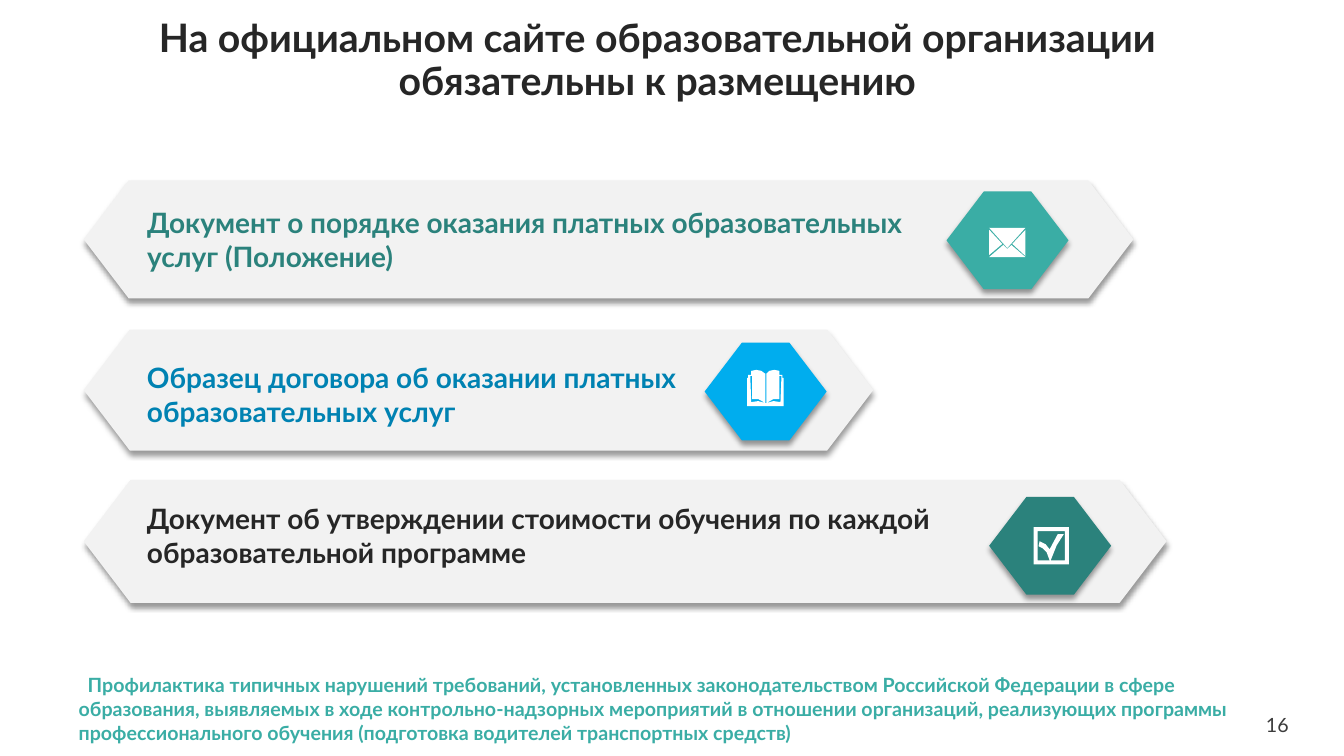
"""Build the slide on documents that must be posted on the school website."""
from lxml import etree
from pptx import Presentation
from pptx.dml.color import RGBColor
from pptx.enum.shapes import MSO_SHAPE
from pptx.enum.text import MSO_ANCHOR, PP_ALIGN
from pptx.oxml.ns import qn
from pptx.util import Inches, Pt

HEXAGON = MSO_SHAPE.HEXAGON
TOP, MIDDLE = MSO_ANCHOR.TOP, MSO_ANCHOR.MIDDLE
LEFT, CENTER, RIGHT = PP_ALIGN.LEFT, PP_ALIGN.CENTER, PP_ALIGN.RIGHT
COLORS = {
    "banner": "F2F2F2", "white": "FFFFFF", "black": "000000",
    "teal": "3AADA5", "dark_teal": "2B827C", "blue": "00ADEE",
    "dark_blue": "0082B2", "ink": "262626", "gray": "3C3C3C",
}

prs = Presentation()
prs.slide_width, prs.slide_height = Inches(13.33), Inches(7.5)
slide = prs.slides.add_slide(prs.slide_layouts[6])
COLUMN, ROW = prs.slide_width / 100, prs.slide_height / 100
GLYPH_UNIT = Inches(0.01)
ICON_WIDTH, ICON_HEIGHT = 9.08, 12.93
BANNER_LEFT, CAPTION_LEFT, CAPTION_HEIGHT = 6.23, 10.2, 10.27


def add_text(words, left, top, width, height, size, color, bold=True,
             align=LEFT, anchor=TOP, inset=None):
    box = slide.shapes.add_textbox(int(left * COLUMN), int(top * ROW),
                                   int(width * COLUMN), int(height * ROW))
    frame = box.text_frame
    frame.word_wrap = True
    frame.vertical_anchor = anchor
    if inset is not None:
        frame.margin_left = frame.margin_right = inset
        frame.margin_top = frame.margin_bottom = inset
    paragraph = frame.paragraphs[0]
    paragraph.text = words
    paragraph.alignment = align
    font = paragraph.font
    font.name, font.size, font.bold = "Lato", Pt(size), bold
    font.color.rgb = RGBColor.from_string(COLORS[color])
    return frame


def add_hexagon(left, top, width, height, color):
    hexagon = slide.shapes.add_shape(HEXAGON, int(left * COLUMN), int(top * ROW),
                                     int(width * COLUMN), int(height * ROW))
    hexagon.adjustments[0] = 0.381
    hexagon.fill.solid()
    hexagon.fill.fore_color.rgb = RGBColor.from_string(COLORS[color])
    hexagon.line.fill.background()
    hexagon.shadow.inherit = False
    effects = hexagon.element.spPr.find(qn("a:effectLst"))
    shadow = etree.SubElement(effects, qn("a:outerShdw"), blurRad=str(Pt(4)),
                              dist=str(Pt(3)), dir="5400000", rotWithShape="0")
    tint = etree.SubElement(shadow, qn("a:srgbClr"), val=COLORS["black"])
    etree.SubElement(tint, qn("a:alpha"), val="40000")


page_right = [(19, 33), (26, 31), (33, 32), (34, 6), (32, 6), (32, 29), (26, 29)]
book = [
    [(18, 4), (14, 1), (9, 0), (4, 1), (4, 5), (1, 5), (1, 8), (0, 8), (0, 36),
     (36, 36), (36, 8), (35, 8), (35, 5), (32, 5), (32, 1), (27, 0), (22, 1), (19, 4)],
    [(18, 4), (18, 33), (19, 33), (19, 4)],
    page_right,
    [(37 - x, y) for x, y in page_right],
]
envelope = [
    [(22, 17), (36, 29), (0, 29), (14, 17), (18, 21)],
    [(36, 2), (36, 28), (23, 16)],
    [(0, 2), (13, 16), (0, 27)],
    [(0, 0), (36, 0), (18, 20)],
]
checkbox = [
    [(0, 0), (35, 0), (35, 37), (0, 37)],
    [(4, 4), (4, 33), (16, 33), (13, 25), (9, 21), (5, 19), (6, 14), (12, 17),
     (16, 22), (24, 7), (30, 7), (23, 18), (17, 33), (31, 33), (31, 4)],
]

documents = [
    ("Документ о порядке оказания платных образовательных услуг (Положение)",
     "dark_teal", "teal", (23.87, 78.1, 15.6), (70.43, 25.33), (26.53, 57.85),
     envelope, (73.6, 30.13)),
    ("Образец договора об оказании платных образовательных услуг",
     "dark_blue", "blue", (43.6, 58.75, 16), (52.43, 45.33), (47.07, 42.6),
     book, (55.6, 48.93)),
    ("Документ об утверждении стоимости обучения по каждой образовательной программе",
     "ink", "dark_teal", (63.47, 80.57, 16.27), (73.6, 65.73), (65.73, 62.4),
     checkbox, (76.9, 69.73)),
]

add_text("16", 94, 94.27, 1.88, 3.2, 14, "gray", bold=False,
         align=RIGHT, anchor=MIDDLE, inset=0)
footer = add_text(
    "Профилактика типичных нарушений требований, установленных законодательством "
    "Российской Федерации в сфере образования, выявляемых в ходе контрольно-надзорных "
    "мероприятий в отношении организаций, реализующих программы профессионального "
    "обучения (подготовка водителей транспортных средств)",
    5.85, 89.07, 89.8, 9.47, 14, "teal", inset=0)
footer.paragraphs[0]._p.get_or_add_pPr().set("indent", str(Inches(0.09)))

for (caption, caption_color, icon_color, (banner_top, banner_width, banner_height),
     (icon_left, icon_top), (caption_top, caption_width),
     glyph, (glyph_left, glyph_top)) in documents:
    add_hexagon(BANNER_LEFT, banner_top, banner_width, banner_height, "banner")
    add_hexagon(icon_left, icon_top, ICON_WIDTH, ICON_HEIGHT, icon_color)
    add_text(caption, CAPTION_LEFT, caption_top, caption_width, CAPTION_HEIGHT,
             20, caption_color)
    builder = slide.shapes.build_freeform(*glyph[0][0], scale=GLYPH_UNIT)
    builder.add_line_segments(glyph[0][1:], close=True)
    for contour in glyph[1:]:
        builder.move_to(*contour[0])
        builder.add_line_segments(contour[1:], close=True)
    symbol = builder.convert_to_shape(int(glyph_left * COLUMN), int(glyph_top * ROW))
    symbol.fill.solid()
    symbol.fill.fore_color.rgb = RGBColor.from_string(COLORS["white"])
    symbol.line.fill.background()
    symbol.shadow.inherit = False

title = add_text(
    "На официальном сайте образовательной организации обязательны к размещению",
    4.35, 5.87, 89.1, 10.13, 28, "ink", align=CENTER, anchor=MIDDLE)
title.margin_bottom = Inches(0.47)
title.paragraphs[0].line_spacing = 0.9

prs.save("out.pptx")
